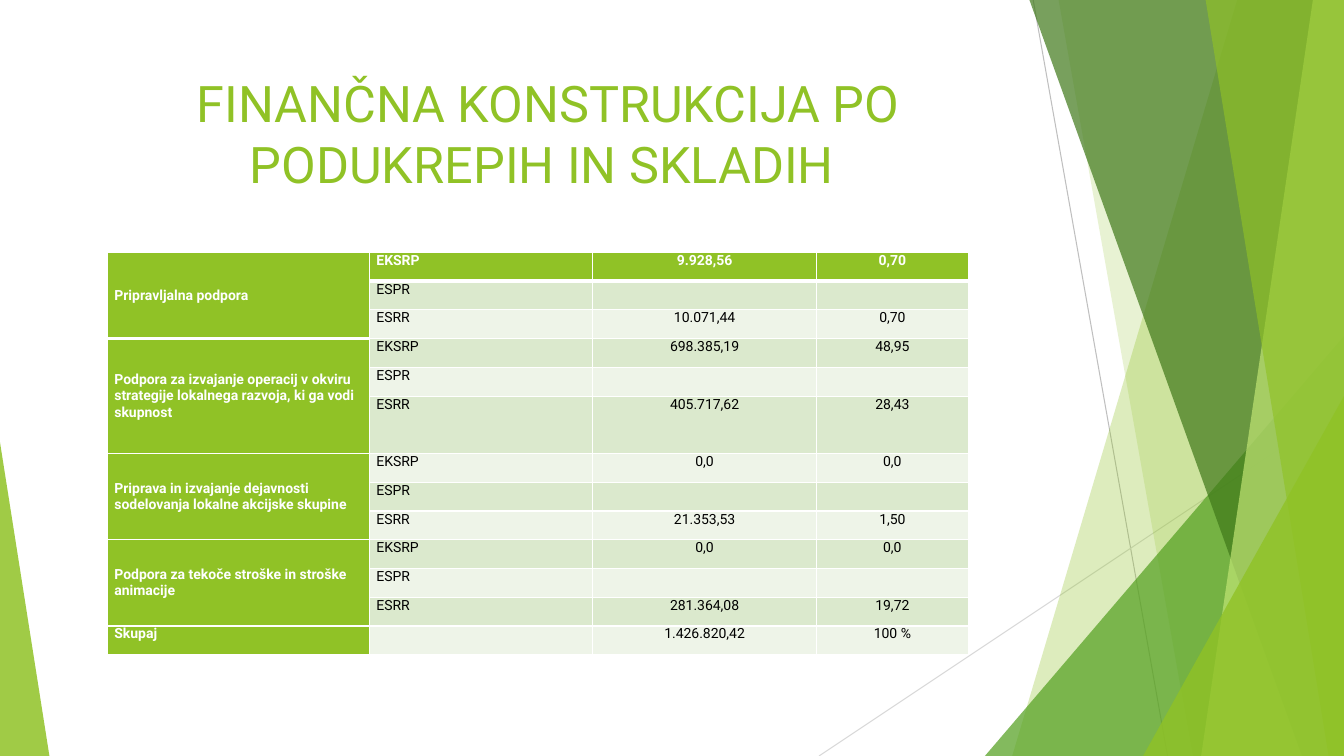
from dataclasses import dataclass

from lxml import etree
from pptx import Presentation
from pptx.dml.color import RGBColor
from pptx.enum.shapes import MSO_CONNECTOR, MSO_SHAPE
from pptx.enum.text import MSO_ANCHOR, MSO_AUTO_SIZE, PP_ALIGN
from pptx.oxml.ns import qn
from pptx.util import Pt

STRAIGHT = MSO_CONNECTOR.STRAIGHT
TRIANGLE = MSO_SHAPE.ISOSCELES_TRIANGLE
TOP, MIDDLE = MSO_ANCHOR.TOP, MSO_ANCHOR.MIDDLE
LEFT, CENTER = PP_ALIGN.LEFT, PP_ALIGN.CENTER
NO_AUTOFIT = MSO_AUTO_SIZE.NONE

WIDTH, HEIGHT = 960, 540
BLEED = -0.6


@dataclass(frozen=True)
class Theme:
    font: str = "Roboto"
    title_size: float = 36
    table_size: float = 10
    lime: str = "90C226"
    green: str = "54A021"
    forest: str = "3F7819"
    pale_lime: str = "C0E474"
    band_dark: str = "DBE9CD"
    band_light: str = "EEF4E8"
    white: str = "FFFFFF"
    black: str = "000000"
    gray: str = "BFBFBF"
    light_gray: str = "D9D9D9"


def write(para, text, *, font, size, color, bold=False, align=LEFT):
    para.alignment = align
    if not text:
        etree.SubElement(para._p, qn("a:endParaRPr"), sz=str(int(size * 100)))
        return
    span = para.add_run()
    span.text = text
    span.font.name = font
    span.font.size = Pt(size)
    span.font.bold = bold
    span.font.color.rgb = RGBColor.from_string(color)


class SlideBuilder:
    def __init__(self, page, theme):
        self.page = page
        self.theme = theme

    def line(self, start, end, color):
        line = self.page.shapes.add_connector(STRAIGHT, *map(Pt, start + end))
        line.line.color.rgb = RGBColor.from_string(color)
        line.line.width = Pt(0.75)
        etree.SubElement(line.element.spPr, qn("a:effectLst"))

    def paint(self, shape, color, opacity):
        shape.shadow.inherit = False
        shape.fill.solid()
        shape.fill.fore_color.rgb = RGBColor.from_string(color)
        shape.line.fill.background()
        tint = shape.element.spPr.find(".//" + qn("a:srgbClr"))
        etree.SubElement(tint, qn("a:alpha"), val=str(opacity * 1000))

    def shard(self, top_left, top_right, bottom_right, bottom_left, color, opacity):
        outline = self.page.shapes.build_freeform(top_left, BLEED, scale=Pt(1))
        outline.add_line_segments(
            [(top_right, BLEED), (bottom_right, HEIGHT), (bottom_left, HEIGHT)]
        )
        self.paint(outline.convert_to_shape(), color, opacity)

    def triangle(self, left, top, width, apex, color, opacity):
        box = self.page.shapes.add_shape(
            TRIANGLE, Pt(left), Pt(top), Pt(width), Pt(HEIGHT - top)
        )
        box.adjustments[0] = apex
        self.paint(box, color, opacity)

    def title(self, text, left, top, width, height):
        box = self.page.shapes.title
        box.left, box.top, box.width, box.height = map(Pt, (left, top, width, height))
        box.element.getparent().append(box.element)
        frame = box.text_frame
        frame.word_wrap = True
        frame.auto_size = NO_AUTOFIT
        frame.vertical_anchor = TOP
        write(frame.paragraphs[0], text, font=self.theme.font,
              size=self.theme.title_size, color=self.theme.lime, align=CENTER)

    def border(self, cell, side, width):
        edge = etree.SubElement(
            cell._tc.get_or_add_tcPr(), qn("a:ln" + side), w=str(Pt(width))
        )
        fill = etree.SubElement(edge, qn("a:solidFill"))
        etree.SubElement(fill, qn("a:srgbClr"), val=self.theme.white)

    def cell(self, cell, text, row, column):
        theme = self.theme
        heading = row == 0 or column == 0
        grouped = column == 0 and row < 12
        band = theme.band_dark if row % 2 else theme.band_light
        cell.margin_left = cell.margin_right = Pt(5)
        cell.margin_top = cell.margin_bottom = 0
        cell.vertical_anchor = MIDDLE if grouped else TOP
        self.border(cell, "L", 1)
        self.border(cell, "R", 1)
        if row == 0:
            self.border(cell, "T", 1)
        self.border(cell, "B", 3 if row == 0 or (column == 0 and row < 3) else 1)
        cell.fill.solid()
        cell.fill.fore_color.rgb = RGBColor.from_string(theme.lime if heading else band)
        write(cell.text_frame.paragraphs[0], text, font=theme.font,
              size=theme.table_size, bold=heading,
              color=theme.white if heading else theme.black,
              align=CENTER if column > 1 else LEFT)

    def table(self, rows, left, top, widths, heights, groups):
        frame = self.page.shapes.add_table(
            len(rows), len(widths), Pt(left), Pt(top), Pt(sum(widths)), Pt(sum(heights))
        )
        table = frame.table
        table.first_row = table.horz_banding = False
        for column, width in zip(table.columns, widths):
            column.width = Pt(width)
        for row, height in zip(table.rows, heights):
            row.height = Pt(height)
        for first, last in groups:
            table.cell(first, 0).merge(table.cell(last, 0))
        for r, row in enumerate(rows):
            for c, text in enumerate(row):
                self.cell(table.cell(r, c), text, r, c)


MEASURES = [
    ("Pripravljalna podpora", ("9.928,56", "0,70"), ("10.071,44", "0,70")),
    ("Podpora za izvajanje operacij v okviru strategije lokalnega razvoja, "
     "ki ga vodi skupnost", ("698.385,19", "48,95"), ("405.717,62", "28,43")),
    ("Priprava in izvajanje dejavnosti sodelovanja lokalne akcijske skupine",
     ("0,0", "0,0"), ("21.353,53", "1,50")),
    ("Podpora za tekoče stroške in stroške animacije",
     ("0,0", "0,0"), ("281.364,08", "19,72")),
]


def main():
    theme = Theme()
    deck = Presentation()
    deck.slide_width, deck.slide_height = Pt(WIDTH), Pt(HEIGHT)
    page = deck.slides.add_slide(deck.slide_layouts[5])
    builder = SlideBuilder(page, theme)

    builder.line((738, 0), (834, HEIGHT), theme.gray)
    builder.line((WIDTH, 290), (585, HEIGHT), theme.light_gray)
    builder.shard(884.2, WIDTH, WIDTH, 722.9, theme.lime, 30)
    builder.shard(756, WIDTH, WIDTH, 851.8, theme.lime, 20)
    builder.triangle(703.5, 240, 256.5, 1, theme.green, 72)
    builder.shard(735.2, WIDTH, WIDTH, 929.5, theme.forest, 70)
    builder.shard(938.2, WIDTH, WIDTH, 858.2, theme.pale_lime, 70)
    builder.shard(861.2, WIDTH, WIDTH, 949, theme.lime, 65)
    builder.triangle(816.5, 283, 143.5, 1, theme.lime, 80)
    builder.triangle(0, 316, 35.3, 0, theme.lime, 85)

    builder.title("FINANČNA KONSTRUKCIJA PO PODUKREPIH IN SKLADIH ", 53.3, 48, 676.8, 104)

    rows = []
    for name, rural, regional in MEASURES:
        rows += [(name, "EKSRP", *rural), ("", "ESPR", "", ""), ("", "ESRR", *regional)]
    rows.append(("Skupaj", "", "1.426.820,42", "100 %"))
    heights = [20.55] * len(rows)
    heights[5] *= 2
    groups = [(first, first + 2) for first in range(0, 12, 3)]
    builder.table(rows, 76.7, 180.3, [187.2, 159.6, 159.6, 108.7], heights, groups)

    deck.save("out.pptx")


if __name__ == "__main__":
    main()
